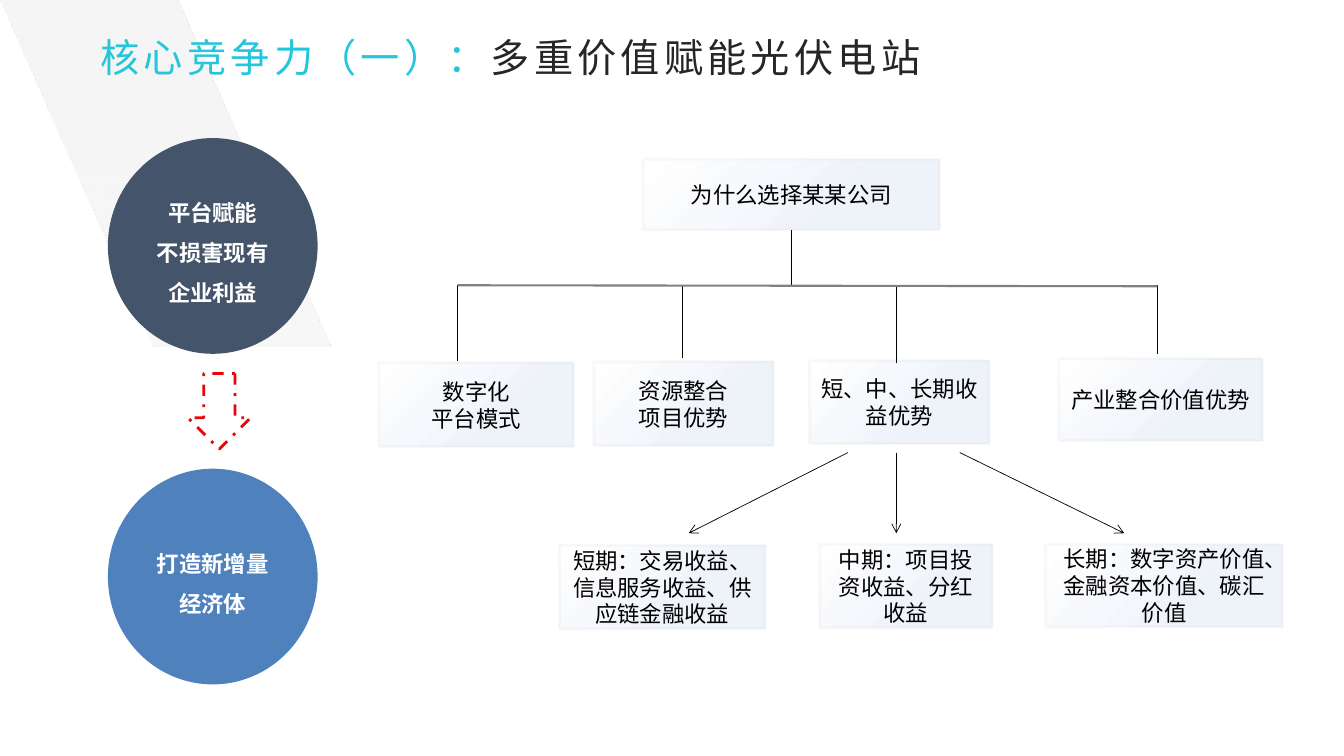
from lxml.etree import SubElement
from pptx import Presentation
from pptx.dml.color import RGBColor
from pptx.enum.dml import MSO_LINE
from pptx.enum.shapes import MSO_CONNECTOR, MSO_SHAPE
from pptx.enum.text import MSO_ANCHOR, MSO_AUTO_SIZE, PP_ALIGN
from pptx.oxml.ns import qn
from pptx.util import Inches, Pt

FONT = "Noto Sans CJK SC"
CELL = Inches(0.1)


def rgb(color):
    return RGBColor.from_string(color)


def grid(*cells):
    """Turn columns and rows of the slide grid into lengths."""
    return [round(cell * CELL) for cell in cells]


presentation = Presentation()
presentation.slide_width, presentation.slide_height = grid(133.3, 75)
slide = presentation.slides.add_slide(presentation.slide_layouts[6])
shapes = slide.shapes

# Slanted band in the top left corner
builder = shapes.build_freeform(*grid(17.6, 0))
builder.add_line_segments([grid(0, 0), grid(15.2, 34.4), grid(32.8, 34.4)])
band = builder.convert_to_shape()
band.shadow.inherit = False
band.line.fill.background()
band.fill.gradient()
band.fill.gradient_angle = 270
for stop, position in zip(band.fill.gradient_stops, (0.09, 1)):
    stop.position = position
    stop.color.rgb = rgb("F5F5F5")
last_color = band.fill._fill._gradFill.findall(".//" + qn("a:srgbClr"))[-1]
SubElement(last_color, qn("a:alpha"), val="76000")

# Title in two colours
title = shapes.add_textbox(*grid(9, 2.8, 84.6, 5.7))
title.text_frame.word_wrap = False
title.text_frame.auto_size = MSO_AUTO_SIZE.SHAPE_TO_FIT_TEXT
for text, color in (("核心竞争力（一）：", "24C6DB"), ("多重价值赋能光伏电站", "262626")):
    run = title.text_frame.paragraphs[0].add_run()
    run.text = text
    run.font.size = Pt(28)
    run.font.color.rgb = rgb(color)
    run.font._element.set("spc", "300")

# Tree boxes: question, advantages, earnings
boxes = [
    (63.8, 15.8, 29.4, 7, "为什么选择某某公司"),
    (37.6, 36, 19.3, 8.3, "数字化\n平台模式"),
    (58.9, 35.9, 17.8, 8.3, "资源整合\n项目优势"),
    (80.3, 35.8, 17.8, 8.2, "短、中、长期收益优势"),
    (105, 35.6, 20.2, 8.1, "产业整合价值优势"),
    (55.5, 54.1, 20.4, 8.3, "短期：交易收益、信息服务收益、供应链金融收益"),
    (81.3, 54, 17.1, 8.3, "中期：项目投资收益、分红收益"),
    (103.7, 54, 23.5, 8.2, "长期：数字资产价值、金融资本价值、碳汇价值"),
]
labelled = []
for *place, text in boxes:
    box = shapes.add_shape(MSO_SHAPE.RECTANGLE, *grid(*place))
    box.fill.gradient()
    box.fill.gradient_angle = 315
    for stop, position, color in zip(box.fill.gradient_stops, (0, 0.7), ("FFFFFF", "EEF2F9")):
        stop.position = position
        stop.color.rgb = rgb(color)
    box.line.color.rgb = rgb("BFC3CB")
    box.line.width = Pt(2)
    line_color = box.line._ln.find(".//" + qn("a:srgbClr"))
    SubElement(line_color, qn("a:alpha"), val="10000")
    labelled.append((box, text, "000000", False, 1))

# Circles on the left
circles = [
    (13.7, "44546A", "平台赋能\n不损害现有企业利益"),
    (46.5, "4F81BD", "打造新增量经济体"),
]
for top, color, text in circles:
    circle = shapes.add_shape(MSO_SHAPE.OVAL, *grid(10.7, top, 20.8, 21.4))
    circle.fill.solid()
    circle.fill.fore_color.rgb = rgb(color)
    circle.line.fill.background()
    labelled.append((circle, text, "FFFFFF", True, 1.5))

for shape, text, color, bold, spacing in labelled:
    shape.shadow.inherit = False
    frame = shape.text_frame
    frame.word_wrap = True
    frame.vertical_anchor = MSO_ANCHOR.MIDDLE
    frame.text = text
    for paragraph in frame.paragraphs:
        paragraph.alignment = PP_ALIGN.CENTER
        paragraph.line_spacing = spacing
        font = paragraph.runs[0].font
        font.size = Pt(16)
        font.bold = bold
        font.color.rgb = rgb(color)

for shape in [title] + [entry[0] for entry in labelled]:
    for paragraph in shape.text_frame.paragraphs:
        for run in paragraph.runs:
            run.font.name = FONT
            SubElement(run.font._element, qn("a:ea"), typeface=FONT)

# Dashed arrow between the circles
down_arrow = shapes.add_shape(MSO_SHAPE.RIGHT_ARROW, *grid(18, 37.7, 7.5, 6.2))
down_arrow.rotation = 90
down_arrow.shadow.inherit = False
down_arrow.fill.background()
down_arrow.line.color.rgb = rgb("E5050A")
down_arrow.line.width = Pt(2)
down_arrow.line.dash_style = MSO_LINE.DASH_DOT

# Tree lines: stems meet the bar, arrows lead to the earnings
BAR = 28.3
stem_ends = [(45.4, 35.8), (67.7, 35.5), (88.9, 36), (114.8, 35.1), (78.5, 22.8)]
links = [(x, y, x, BAR, "000000", 1, False) for x, y in stem_ends]
links.append((45.4, BAR, 114.8, 28.4, "808080", 1.5, False))
links += [
    (start, 44.9, end, 52.9, "000000", 0.5, True)
    for start, end in ((84.1, 68.3), (88.9, 88.9), (95.2, 111.5))
]
for *ends, color, width, has_arrow in links:
    link = shapes.add_connector(MSO_CONNECTOR.STRAIGHT, *grid(*ends))
    link.line.color.rgb = rgb(color)
    link.line.width = Pt(width)
    if has_arrow:
        SubElement(link.line._ln, qn("a:tailEnd"), type="arrow")
    SubElement(link._element.spPr, qn("a:effectLst"))

presentation.save("out.pptx")
